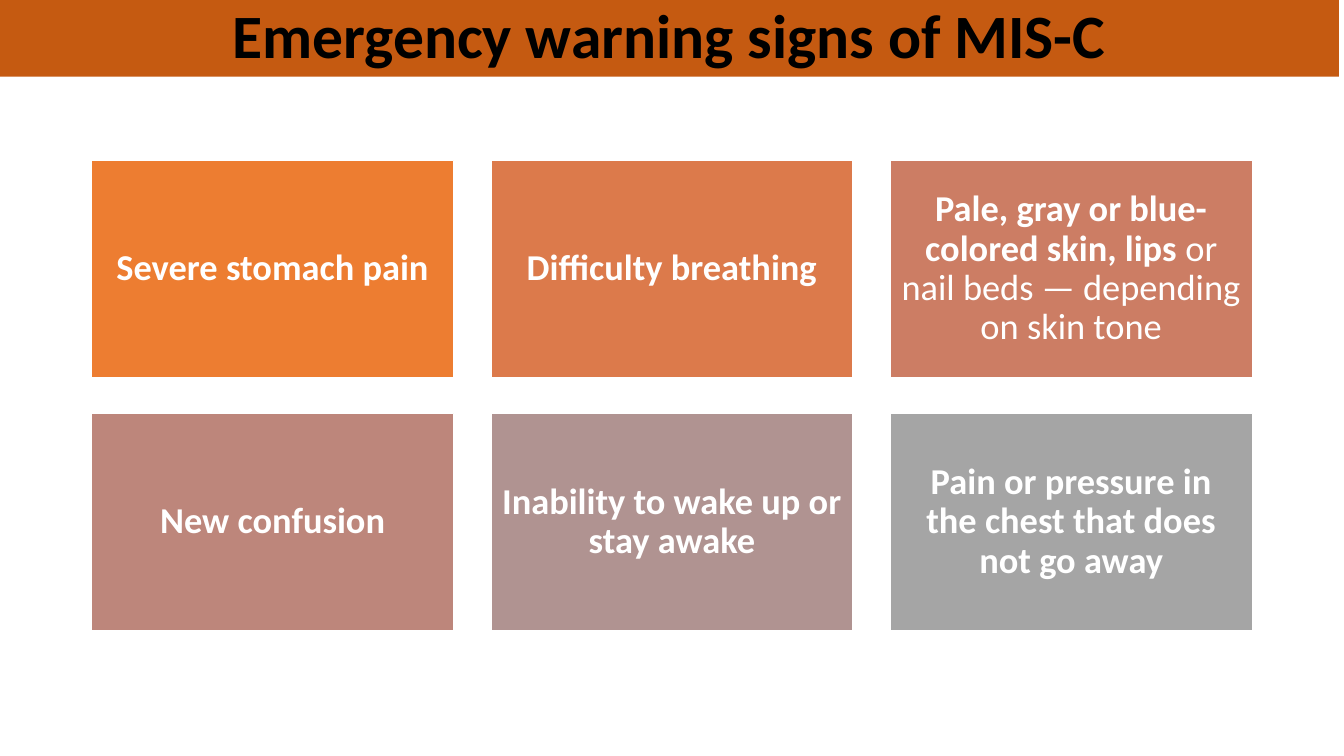
"""Build the slide on the emergency warning signs of MIS-C."""
from dataclasses import dataclass

import pptx
import pptx.dml.color
import pptx.enum.shapes
import pptx.enum.text
import pptx.util

Inches = pptx.util.Inches


@dataclass(frozen=True)
class Theme:
    """Colours, font and type sizes of the slide."""
    font: str = "Calibri"
    title_size: int = 44
    sign_size: int = 26
    title_fill: str = "C55A11"
    title_text: str = "000000"
    sign_text: str = "FFFFFF"
    outline: str = "FFFFFF"
    sign_fills: tuple = ("ED7D31", "DC7A4B", "CC7D64", "BD867B", "B09391", "A5A5A5")


SIGNS = [
    [("Severe stomach pain", True)],
    [("Difficulty breathing", True)],
    [("Pale, gray or blue-colored skin, lips ", True),
     ("or nail beds — depending on skin tone", False)],
    [("New confusion", True)],
    [("Inability to wake up or stay awake", True)],
    [("Pain or pressure in the chest that does not go away", True)],
]
COLUMNS = 3
GRID_LEFT, GRID_TOP = 0.91, 1.59
SIGN_WIDTH, SIGN_HEIGHT = 3.59, 2.16
COLUMN_STEP, ROW_STEP = 3.96, 2.51


def rgb(value):
    """Return the colour for a hex value."""
    return pptx.dml.color.RGBColor.from_string(value)


class WarningSlide:
    """Draw the elements of one slide in a theme."""

    def __init__(self, slide, theme):
        """Keep the slide and its theme."""
        self.slide = slide
        self.theme = theme

    def block(self, left, top, width, height, fill):
        """Add a plain filled rectangle."""
        block = self.slide.shapes.add_shape(
            pptx.enum.shapes.MSO_SHAPE.RECTANGLE,
            Inches(left), Inches(top), Inches(width), Inches(height))
        block.shadow.inherit = False
        block.fill.solid()
        block.fill.fore_color.rgb = rgb(fill)
        block.line.fill.background()
        return block

    def label(self, block, runs, size, color, anchor):
        """Put centred text runs into a block."""
        frame = block.text_frame
        frame.word_wrap = True
        frame.vertical_anchor = anchor
        paragraph = frame.paragraphs[0]
        paragraph.alignment = pptx.enum.text.PP_ALIGN.CENTER
        paragraph.line_spacing = 0.9
        for words, bold in runs:
            run = paragraph.add_run()
            run.text = words
            run.font.name = self.theme.font
            run.font.size = pptx.util.Pt(size)
            run.font.bold = bold
            run.font.color.rgb = rgb(color)

    def title(self, words):
        """Add the title band."""
        band = self.block(0, 0, 13.28, 0.76, self.theme.title_fill)
        self.label(band, [(words, True)], self.theme.title_size,
                   self.theme.title_text, pptx.enum.text.MSO_ANCHOR.BOTTOM)

    def sign(self, left, top, runs, fill):
        """Add one warning sign."""
        tile = self.block(left, top, SIGN_WIDTH, SIGN_HEIGHT, fill)
        tile.line.color.rgb = rgb(self.theme.outline)
        tile.line.width = pptx.util.Pt(1)
        frame = tile.text_frame
        frame.margin_left = frame.margin_right = Inches(0.11)
        frame.margin_top = frame.margin_bottom = Inches(0.11)
        self.label(tile, runs, self.theme.sign_size,
                   self.theme.sign_text, pptx.enum.text.MSO_ANCHOR.MIDDLE)


def main():
    """Build and save the presentation."""
    deck = pptx.Presentation()
    deck.slide_width, deck.slide_height = Inches(13.33), Inches(7.5)
    theme = Theme()
    page = WarningSlide(deck.slides.add_slide(deck.slide_layouts[6]), theme)
    page.title("Emergency warning signs of MIS-C")
    for index, (runs, fill) in enumerate(zip(SIGNS, theme.sign_fills)):
        row, column = divmod(index, COLUMNS)
        page.sign(GRID_LEFT + column * COLUMN_STEP,
                  GRID_TOP + row * ROW_STEP, runs, fill)
    deck.save("out.pptx")


if __name__ == "__main__":
    main()
